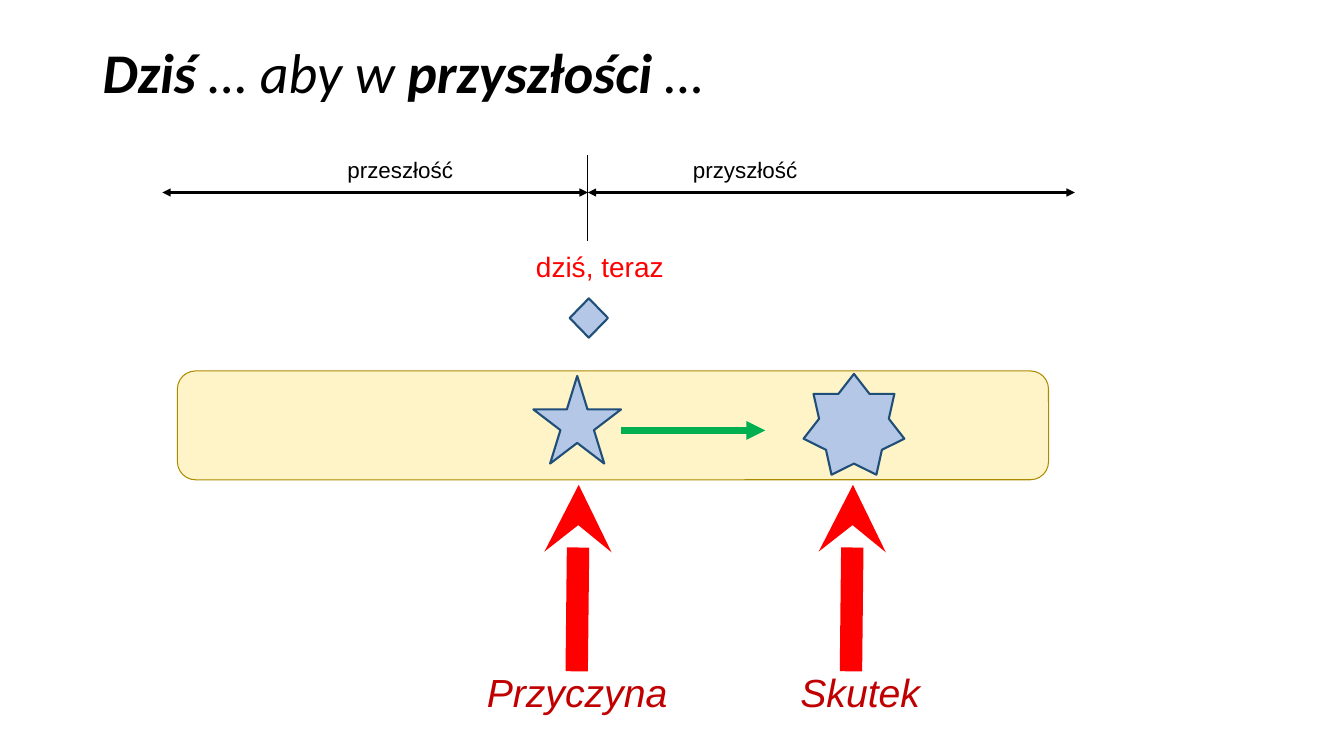
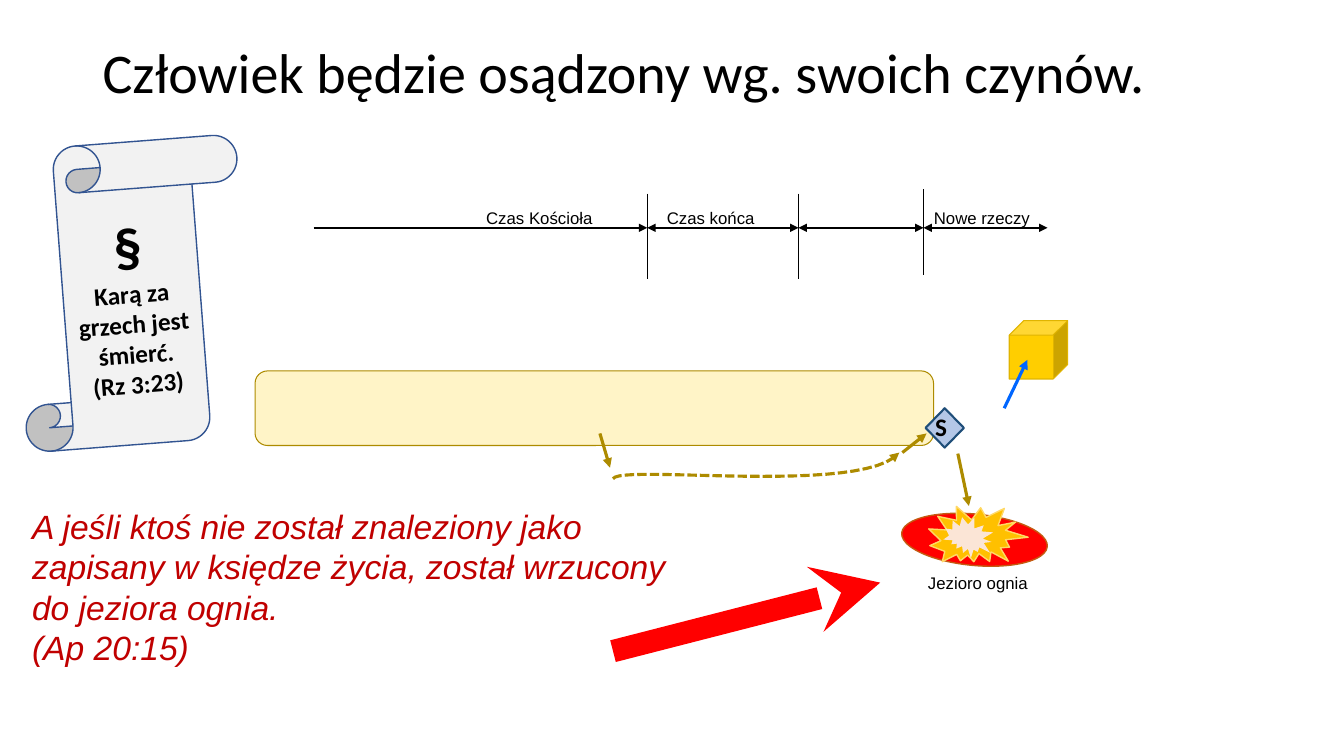
from lxml.etree import SubElement
from pptx import Presentation
from pptx.dml.color import RGBColor
from pptx.enum.dml import MSO_LINE
from pptx.enum.shapes import MSO_CONNECTOR, MSO_SHAPE
from pptx.enum.text import MSO_ANCHOR, PP_ALIGN
from pptx.oxml.ns import qn
from pptx.util import Inches, Pt

BLACK, RED, DARK_RED = "000000", "FF0000", "C00000"
PALE_BLUE, NAVY = "B4C7E7", "1F4E79"
CREAM, OLIVE = "FFF4C7", "AD8B00"


def color(value):
    return RGBColor.from_string(value)


def style_line(line, stroke, width, head=None, tail=None):
    line.color.rgb = color(stroke)
    line.width = Pt(width)
    properties = line._get_or_add_ln()
    for tag, arrow in (("a:headEnd", head), ("a:tailEnd", tail)):
        if arrow:
            SubElement(properties, qn(tag), type=arrow)


def set_font(paragraph, size, name, ink=BLACK, bold=False, italic=False):
    font = paragraph.font
    font.size, font.name = Pt(size), name
    font.bold, font.italic = bold, italic
    font.color.rgb = color(ink)


def add_line(slide, start, end, stroke=BLACK, width=1.5, head=None, tail=None):
    connector = slide.shapes.add_connector(
        MSO_CONNECTOR.STRAIGHT, *[Inches(value) for value in (*start, *end)])
    style_line(connector.line, stroke, width, head, tail)
    SubElement(connector._element.spPr, qn("a:effectLst"))


def add_figure(slide, kind, box, fill, stroke=None, width=1, rotation=0):
    figure = slide.shapes.add_shape(kind, *[Inches(value) for value in box])
    figure.shadow.inherit = False
    figure.rotation = rotation
    figure.fill.solid()
    figure.fill.fore_color.rgb = color(fill)
    if stroke:
        style_line(figure.line, stroke, width)
    else:
        figure.line.fill.background()
    return figure


def add_text(slide, box, lines, size, name="Arial", ink=BLACK, italic=False):
    frame = slide.shapes.add_textbox(*[Inches(value) for value in box]).text_frame
    frame.word_wrap = True
    for index, line in enumerate(lines):
        paragraph = frame.add_paragraph() if index else frame.paragraphs[0]
        paragraph.text = line
        set_font(paragraph, size, name, ink, italic=italic)
    return frame


def add_label(slide, box, label, size, ink=BLACK):
    frame = add_text(slide, box, [label], size, ink=ink)
    frame.margin_left = frame.margin_right = Inches(0.03)
    frame.margin_top = frame.margin_bottom = Inches(0.03)
    frame.vertical_anchor = MSO_ANCHOR.MIDDLE
    frame.paragraphs[0].alignment = PP_ALIGN.CENTER


def add_title(slide, parts, italic=False):
    title = add_text(slide, (0.92, 0.4, 11.5, 0.78), [""], 40, "Calibri", italic=italic)
    paragraph = title.paragraphs[0]
    paragraph.line_spacing = 0.9
    for wording, bold in parts:
        run = paragraph.add_run()
        run.text = wording
        run.font.bold = bold


def add_timeline(slide, y, bounds, ticks, open_start=False):
    for index, (start, end) in enumerate(zip(bounds, bounds[1:])):
        head = None if open_start and index == 0 else "triangle"
        add_line(slide, (start, y), (end, y), head=head, tail="triangle")
    for x, top in ticks:
        add_line(slide, (x, top), (x, top + 0.85), width=0.5)


def add_band(slide, box):
    add_figure(slide, MSO_SHAPE.ROUNDED_RECTANGLE, box, CREAM, OLIVE, 0.75)


def add_event(slide, kind, box):
    return add_figure(slide, kind, box, PALE_BLUE, NAVY, 1.5)


def add_red_arrow(slide, start, end):
    add_line(slide, start, end, RED, 16, tail="stealth")


def add_pointer(slide, x, top, caption, caption_left):
    add_red_arrow(slide, (x, top + 1.85), (x + 0.02, top))
    add_text(slide, (caption_left, top + 1.77, 2.16, 0.57), [caption], 28,
             ink=DARK_RED, italic=True)


def add_scroll(slide, box):
    scroll = add_figure(slide, MSO_SHAPE.VERTICAL_SCROLL, box, "F2F2F2", "325491",
                        rotation=355.6)
    scroll.adjustments[0] = 0.203
    frame = scroll.text_frame
    frame.word_wrap = True
    frame.vertical_anchor = MSO_ANCHOR.MIDDLE
    verses = (("§", 40), ("Karą za grzech jest śmierć.", 18), ("(Rz 3:23)", 18))
    for index, (verse, size) in enumerate(verses):
        paragraph = frame.add_paragraph() if index else frame.paragraphs[0]
        paragraph.text = verse
        paragraph.alignment = PP_ALIGN.CENTER
        set_font(paragraph, size, "Calibri", bold=True)


def add_fire_lake(slide, left, top):
    add_figure(slide, MSO_SHAPE.FLOWCHART_CONNECTOR, (left, top + 0.12, 1.45, 0.51),
               RED, "C55A11", rotation=5.4)
    add_figure(slide, MSO_SHAPE.EXPLOSION2, (left + 0.27, top, 0.97, 0.68),
               "FFC000", "FFD966", rotation=16.2)
    add_figure(slide, MSO_SHAPE.EXPLOSION2, (left + 0.44, top + 0.13, 0.47, 0.45),
               "FBE5D6", rotation=56.2)
    add_label(slide, (left + 0.04, top + 0.67, 1.44, 0.26), "Jezioro ognia", 12)


def bezier(controls, t):
    weights = ((1 - t) ** 3, 3 * t * (1 - t) ** 2, 3 * t ** 2 * (1 - t), t ** 3)
    return tuple(Inches(sum(weight * point[axis]
                            for weight, point in zip(weights, controls)))
                 for axis in (0, 1))


def add_dashed_curve(slide, controls, steps=24):
    points = [bezier(controls, step / steps) for step in range(steps + 1)]
    builder = slide.shapes.build_freeform(*points[0], scale=1.0)
    builder.add_line_segments(points[1:], close=False)
    curve = builder.convert_to_shape()
    curve.shadow.inherit = False
    curve.fill.background()
    curve.line.dash_style = MSO_LINE.SQUARE_DOT
    style_line(curve.line, OLIVE, 2.25, tail="triangle")


def add_soul_route(slide):
    add_dashed_curve(slide, ((6.08, 4.75), (6.15, 4.6), (8.57, 4.92), (8.92, 4.49)))
    steps = (((5.95, 4.3), (6.05, 4.64), OLIVE),
             ((8.95, 4.49), (9.19, 4.3), OLIVE),
             ((9.5, 4.5), (9.61, 5.02), OLIVE),
             ((9.96, 4.05), (10.19, 3.57), "0066FF"))
    for start, end, stroke in steps:
        add_line(slide, start, end, stroke, 2.25, tail="triangle")


def add_judgement(slide, box):
    frame = add_event(slide, MSO_SHAPE.DIAMOND, box).text_frame
    frame.margin_left = frame.margin_right = 0
    frame.margin_top = frame.margin_bottom = Inches(0.04)
    frame.vertical_anchor = MSO_ANCHOR.MIDDLE
    paragraph = frame.paragraphs[0]
    paragraph.text = "S"
    paragraph.alignment = PP_ALIGN.LEFT
    paragraph.line_spacing = 0.9
    set_font(paragraph, 18, "Calibri", bold=True)


def build_cause_slide(slide):
    add_title(slide, (("Dziś ", True), ("… aby w ", False),
                      ("przyszłości ", True), ("…", False)), italic=True)
    add_band(slide, (1.76, 3.68, 8.64, 1.08))
    add_line(slide, (6.16, 4.27), (7.59, 4.27), "00B050", 4.5, tail="triangle")
    add_pointer(slide, 5.72, 4.81, "Przyczyna", 4.73)
    add_pointer(slide, 8.44, 4.81, "Skutek", 7.84)
    add_event(slide, MSO_SHAPE.STAR_5_POINT, (5.29, 3.73, 0.87, 0.87))
    add_event(slide, MSO_SHAPE.STAR_7_POINT, (7.97, 3.71, 1, 1))
    add_event(slide, MSO_SHAPE.DIAMOND, (5.65, 2.96, 0.38, 0.39))
    add_timeline(slide, 1.91, (1.61, 5.83, 10.66), [(5.83, 1.54)])
    add_label(slide, (3.25, 1.52, 1.44, 0.33), "przeszłość", 16)
    add_label(slide, (6.67, 1.52, 1.44, 0.33), "przyszłość", 16)
    add_label(slide, (5.23, 2.44, 1.44, 0.4), "dziś, teraz", 20, RED)


def build_judgement_slide(slide):
    add_band(slide, (2.53, 3.68, 6.73, 0.74))
    add_title(slide, [("Człowiek będzie osądzony wg. swoich czynów.", False)])
    add_timeline(slide, 2.26, (3.11, 6.42, 7.92, 9.16, 10.39),
                 ((6.42, 1.92), (7.92, 1.92), (9.16, 1.88)), open_start=True)
    for left, width, era in ((4.63, 1.44, "Czas Kościoła"),
                             (6.48, 1.14, "Czas końca"),
                             (9.16, 1.16, "Nowe rzeczy")):
        add_label(slide, (left, 2.03, width, 0.26), era, 12)
    add_judgement(slide, (9.18, 4.05, 0.38, 0.39))
    add_figure(slide, MSO_SHAPE.CUBE, (10.01, 3.18, 0.58, 0.58), "FFCE00", "E0B400", 0.75)
    add_soul_route(slide)
    add_fire_lake(slide, 8.94, 4.98)
    add_text(slide, (0.22, 4.97, 6.77, 1.72),
             ("A jeśli ktoś nie został znaleziony jako zapisany w księdze życia, "
              "został wrzucony \ndo jeziora ognia.", "(Ap 20:15)"),
             24, ink=DARK_RED, italic=True)
    add_red_arrow(slide, (6.08, 6.46), (8.73, 5.78))
    add_scroll(slide, (0.16, 1.41, 2.29, 3))


def main():
    presentation = Presentation()
    presentation.slide_width = Inches(13.33)
    presentation.slide_height = Inches(7.5)
    blank = presentation.slide_layouts[6]
    for build in (build_cause_slide, build_judgement_slide):
        build(presentation.slides.add_slide(blank))
    presentation.save("out.pptx")


if __name__ == "__main__":
    main()
